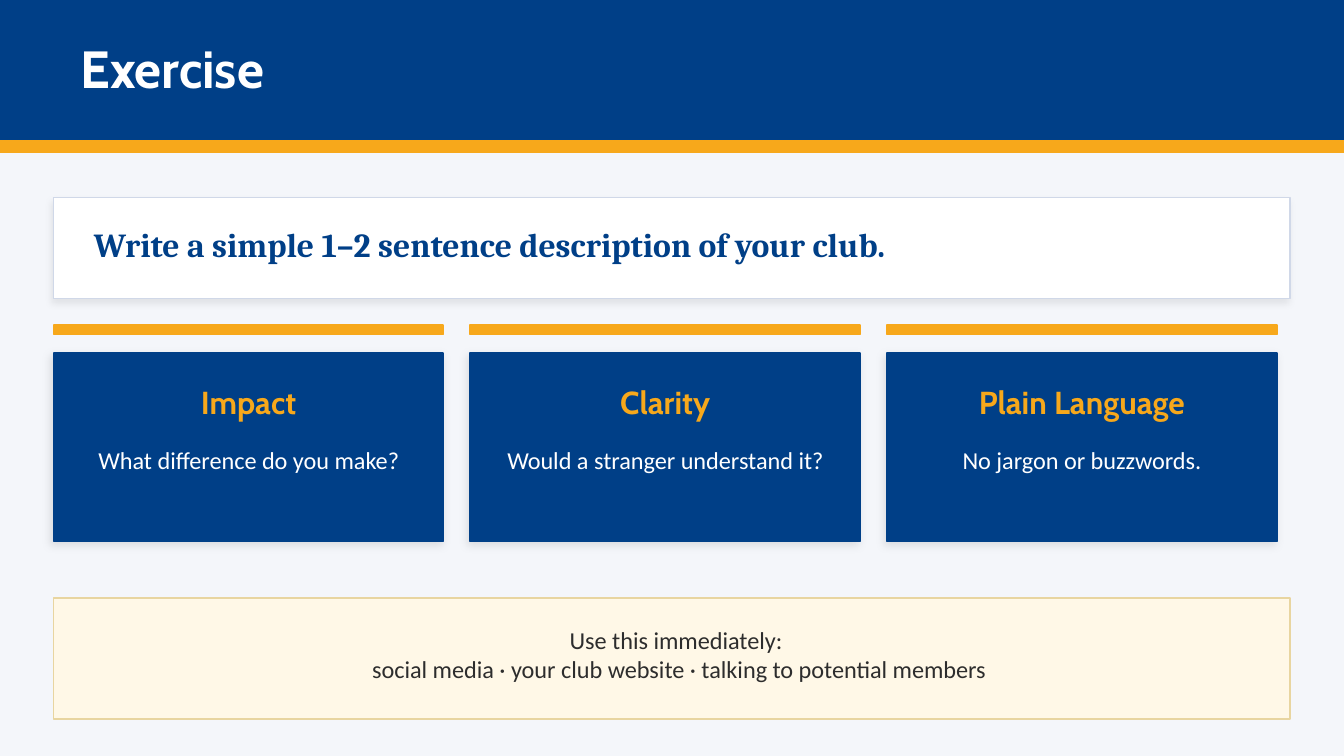
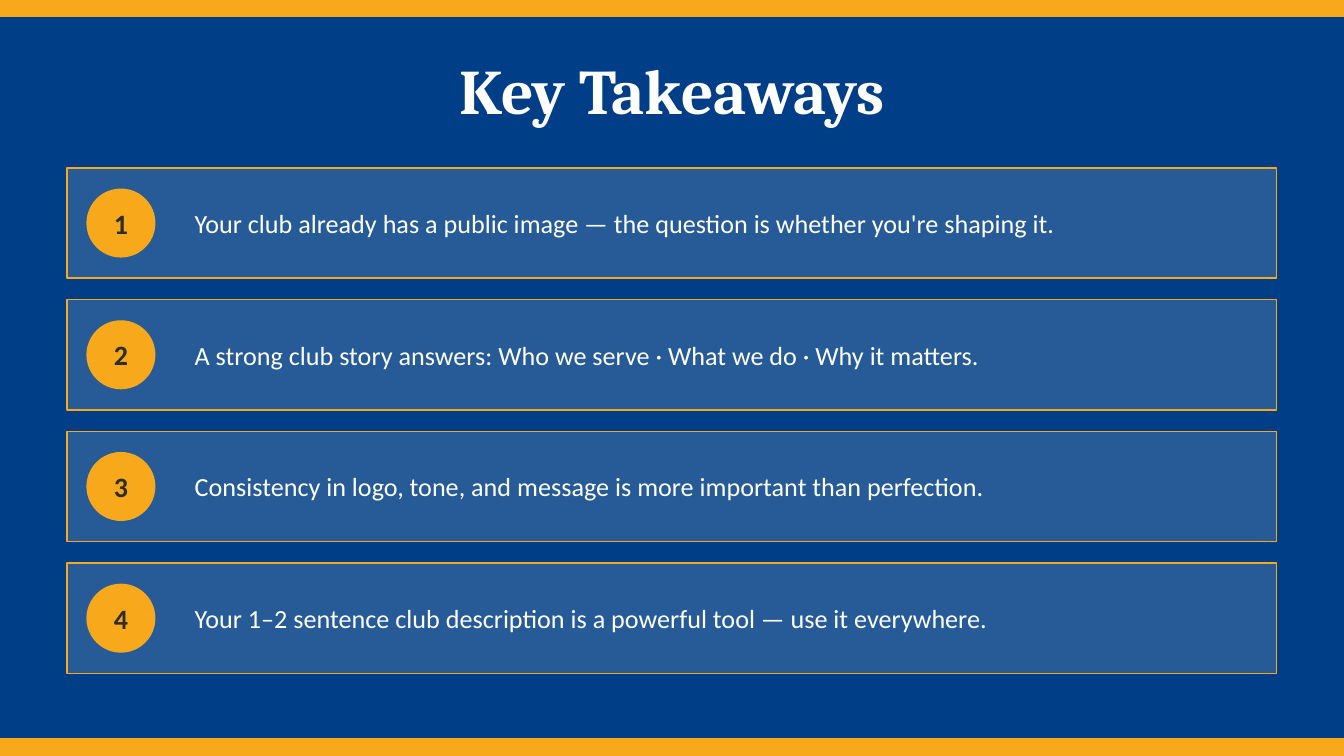
from lxml import etree
from pptx import Presentation
from pptx.dml.color import RGBColor
from pptx.enum.shapes import MSO_SHAPE
from pptx.enum.text import MSO_ANCHOR, PP_ALIGN
from pptx.oxml.ns import qn
from pptx.util import Pt

RECT, OVAL = MSO_SHAPE.RECTANGLE, MSO_SHAPE.OVAL
LEFT, CENTER = PP_ALIGN.LEFT, PP_ALIGN.CENTER
MIDDLE = MSO_ANCHOR.MIDDLE

PX = 9144  # 100 px to the inch
SLIDE_W = 1000

BLUE, GOLD, WHITE, INK = "003F87", "F7A81B", "FFFFFF", "2D2D2D"
PALE, CREAM = "F4F6FA", "FFF8E7"
GREY_LINE, CREAM_LINE = "D0D8E8", "E8D5A0"
HEAD, BODY, SERIF = "Cabin", "Calibri", "Cambria"

CRITERIA = [
    ("Impact", "What difference do you make?"),
    ("Clarity", "Would a stranger understand it?"),
    ("Plain Language", "No jargon or buzzwords."),
]
TAKEAWAYS = [
    "Your club already has a public image — the question is whether you're shaping it.",
    "A strong club story answers: Who we serve · What we do · Why it matters.",
    "Consistency in logo, tone, and message is more important than perfection.",
    "Your 1–2 sentence club description is a powerful tool — use it everywhere.",
]


def rgb(color):
    return RGBColor.from_string(color)


def emu(*lengths):
    return [n * PX for n in lengths]


def set_alpha(color_element, percent):
    etree.SubElement(color_element, qn("a:alpha"), val=str(percent * 1000))


def add_shadow(sp, alpha, blur):
    effects = sp._element.spPr.find(qn("a:effectLst"))
    shadow = etree.SubElement(effects, qn("a:outerShdw"), blurRad=str(Pt(blur)),
                              dist=str(Pt(2)), dir=str(135 * 60000),
                              algn="bl", rotWithShape="0")
    set_alpha(etree.SubElement(shadow, qn("a:srgbClr"), val="000000"), alpha)


def add_box(s, x, y, w, h, fill, line=None, weight=1, kind=RECT, alpha=None):
    sp = s.shapes.add_shape(kind, *emu(x, y, w, h))
    sp.fill.solid()
    sp.fill.fore_color.rgb = rgb(fill)
    sp.line.color.rgb = rgb(line or fill)
    sp.line.width = Pt(weight)
    sp.shadow.inherit = False
    if alpha is not None:
        set_alpha(sp._element.spPr.find(qn("a:solidFill"))[0], alpha)
    return sp


def add_text(s, x, y, w, h, text, size, color, font=BODY, bold=False,
             align=LEFT, inset=(10, 5)):
    """Add a text box with one paragraph per line of text."""
    tf = s.shapes.add_textbox(*emu(x, y, w, h)).text_frame
    tf.word_wrap = True
    tf.vertical_anchor = MIDDLE
    tf.margin_left = tf.margin_right = inset[0] * PX
    tf.margin_top = tf.margin_bottom = inset[1] * PX
    for i, line in enumerate(text.split("\n")):
        p = tf.paragraphs[0] if i == 0 else tf.add_paragraph()
        p.alignment = align
        r = p.add_run()
        r.text = line
        r.font.name, r.font.size, r.font.bold = font, Pt(size), bold
        r.font.color.rgb = rgb(color)


def new_slide(prs, background):
    s = prs.slides.add_slide(prs.slide_layouts[6])
    s.background.fill.solid()
    s.background.fill.fore_color.rgb = rgb(background)
    return s


def gold_band(s, y, h):
    add_box(s, 0, y, SLIDE_W, h, GOLD)


def header(s, title, h=105):
    add_box(s, 0, 0, SLIDE_W, h, BLUE)
    gold_band(s, h, 8)
    add_text(s, 50, 18, 700, 65, title, 28, WHITE, font=HEAD, bold=True)


def task_panel(s, x, y, w, h, text):
    add_shadow(add_box(s, x, y, w, h, WHITE, GREY_LINE, 0.75), 7, 4)
    add_text(s, x + 20, y + 5, w - 40, h - 15, text, 18, BLUE, font=SERIF, bold=True)


def criterion_card(s, x, y, w, h, title, question):
    add_shadow(add_box(s, x, y, w, h, BLUE), 10, 5)
    add_box(s, x, y - 21, w, 7, GOLD)
    add_text(s, x, y + 11, w, 50, title, 17, GOLD, font=HEAD, bold=True, align=CENTER)
    add_text(s, x + 10, y + 44, w - 20, 70, question, 13, WHITE, align=CENTER)


def usage_note(s, x, y, w, h, text):
    add_box(s, x, y, w, h, CREAM, CREAM_LINE, 0.8)
    add_text(s, x + 25, y + 7, w - 40, h - 20, text, 13, INK, align=CENTER)


def takeaway_row(s, x, y, w, h, number, text):
    add_box(s, x, y, w, h, WHITE, GOLD, 0.75, alpha=15)
    badge = (x + 15, y + 16, 50, 50)
    add_box(s, *badge, GOLD, kind=OVAL)
    add_text(s, *badge, str(number), 15, INK, bold=True, align=CENTER, inset=(0, 0))
    add_text(s, x + 85, y + 5, w - 110, h - 10, text, 14, WHITE)


def exercise_slide(prs):
    s = new_slide(prs, PALE)
    header(s, "Exercise")
    task_panel(s, 40, 147, 920, 75,
               "Write a simple 1–2 sentence description of your club.")
    card_w, gap = 290, 20
    for i, (title, question) in enumerate(CRITERIA):
        criterion_card(s, 40 + i * (card_w + gap), 263, card_w, 140, title, question)
    usage_note(s, 40, 445, 920, 90,
               "Use this immediately: \n"
               "social media · your club website · talking to potential members")


def takeaways_slide(prs):
    s = new_slide(prs, BLUE)
    for y in (0, 550):
        gold_band(s, y, 12)
    add_text(s, 50, 30, 900, 72, "Key Takeaways", 34, WHITE,
             font=SERIF, bold=True, align=CENTER)
    row_h, gap = 82, 16
    for i, text in enumerate(TAKEAWAYS):
        takeaway_row(s, 50, 125 + i * (row_h + gap), 900, row_h, i + 1, text)


def main():
    prs = Presentation()
    prs.slide_width = SLIDE_W * PX
    prs.slide_height = prs.slide_width * 9 // 16
    exercise_slide(prs)
    takeaways_slide(prs)
    prs.save("out.pptx")


if __name__ == "__main__":
    main()
